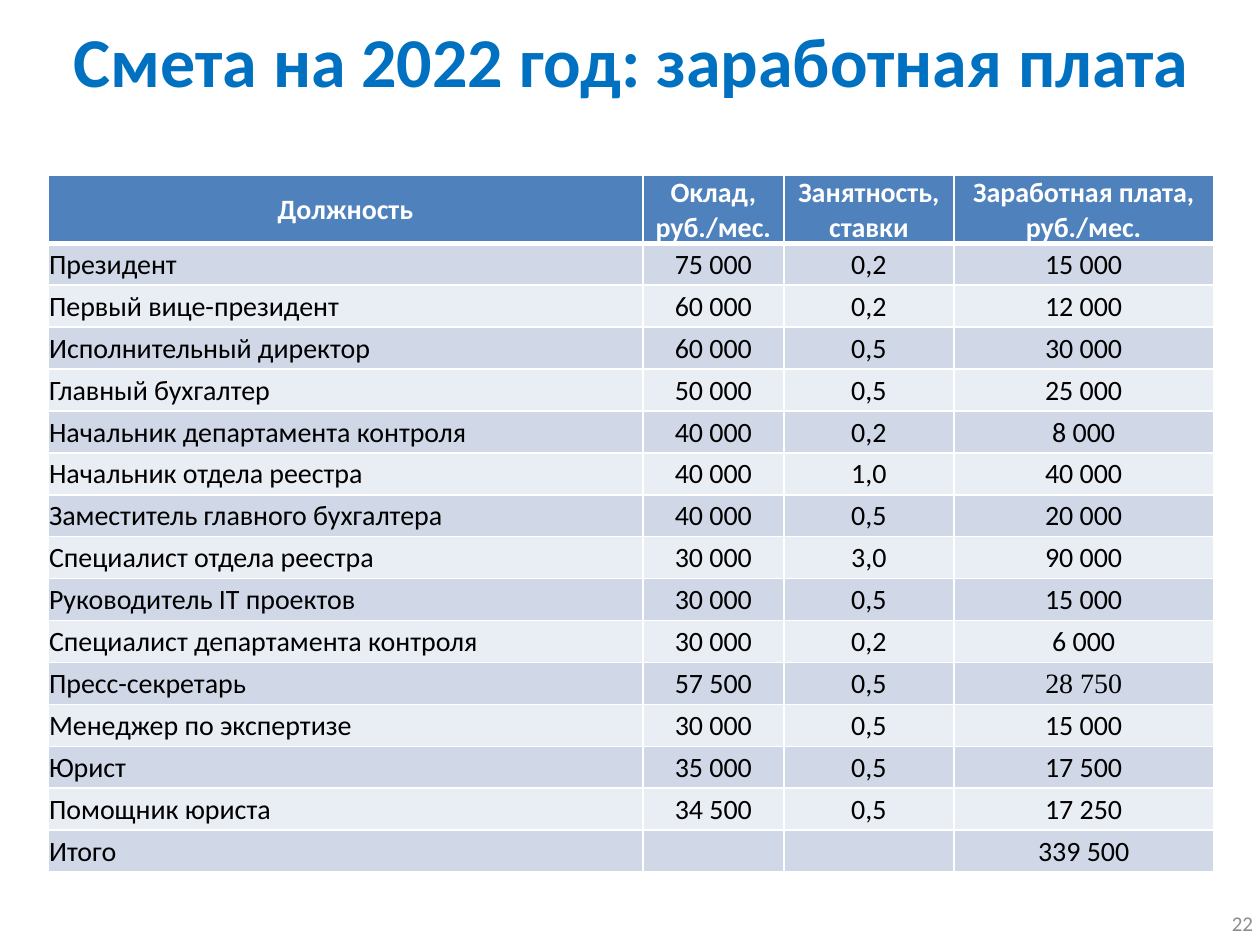
import pptx
import pptx.dml.color
import pptx.enum.text
import pptx.util
from lxml import etree

Cm = pptx.util.Cm
Pt = pptx.util.Pt
ALIGN = pptx.enum.text.PP_ALIGN
MIDDLE = pptx.enum.text.MSO_ANCHOR.MIDDLE
NS = "http://schemas.openxmlformats.org/drawingml/2006/main"

HUES = {"title": "0070C0", "head": "4F81BD", "odd": "D0D8E8", "even": "E9EDF4",
        "white": "FFFFFF", "black": "000000", "gray": "8C8C8C"}

WIDTHS = (11.99, 2.84, 3.43, 5.23)
HEAD = ("Должность", "Оклад, руб./мес.", "Занятность, ставки",
        "Заработная плата, руб./мес.")
STAFF = (
    ("Президент", "75 000", "0,2", "15 000"),
    ("Первый вице-президент", "60 000", "0,2", "12 000"),
    ("Исполнительный директор", "60 000", "0,5", "30 000"),
    ("Главный бухгалтер", "50 000", "0,5", "25 000"),
    ("Начальник департамента контроля", "40 000", "0,2", "8 000"),
    ("Начальник отдела реестра", "40 000", "1,0", "40 000"),
    ("Заместитель главного бухгалтера", "40 000", "0,5", "20 000"),
    ("Специалист отдела реестра", "30 000", "3,0", "90 000"),
    ("Руководитель IT проектов", "30 000", "0,5", "15 000"),
    ("Специалист департамента контроля", "30 000", "0,2", "6 000"),
    ("Пресс-секретарь", "57 500", "0,5", "28 750"),
    ("Менеджер по экспертизе", "30 000", "0,5", "15 000"),
    ("Юрист", "35 000", "0,5", "17 500"),
    ("Помощник юриста", "34 500", "0,5", "17 250"),
    ("Итого", "", "", "339 500"),
)


def color(name):
    return pptx.dml.color.RGBColor.from_string(HUES[name])


def write(frame, text, size=16, hue="black", bold=False, align=ALIGN.CENTER,
          face="Calibri"):
    para = frame.paragraphs[0]
    para.alignment = align
    run = para.add_run()
    run.text = text
    run.font.name = face
    run.font.size = Pt(size)
    run.font.bold = bold
    run.font.color.rgb = color(hue)


def border(cell, base):
    """Draw white cell edges; base is the width of the lower one in points."""
    props = cell._tc.get_or_add_tcPr()
    for spot, (side, width) in enumerate(
            (("L", 1), ("R", 1), ("T", 1), ("B", base))):
        line = etree.Element(f"{{{NS}}}ln{side}", w=str(Pt(width)))
        fill = etree.SubElement(line, f"{{{NS}}}solidFill")
        etree.SubElement(fill, f"{{{NS}}}srgbClr", val=HUES["white"])
        props.insert(spot, line)


def style(cell, fill, base=1):
    cell.fill.solid()
    cell.fill.fore_color.rgb = color(fill)
    cell.vertical_anchor = MIDDLE
    cell.margin_left = cell.margin_right = cell.margin_top = Cm(0.02)
    cell.margin_bottom = 0
    border(cell, base)


def add_title(slide):
    title = slide.shapes.title
    title.left, title.top = Cm(0), Cm(-0.05)
    title.width, title.height = Cm(25.45), Cm(2.49)
    title.text_frame.vertical_anchor = MIDDLE
    write(title.text_frame, "Смета на 2022 год: заработная плата",
          size=40, hue="title", bold=True)


def add_costs(slide):
    table = slide.shapes.add_table(
        len(STAFF) + 1, len(HEAD), Cm(0.97), Cm(3.53),
        Cm(sum(WIDTHS)), Cm(14.07)).table
    for col, width in zip(table.columns, WIDTHS):
        col.width = Cm(width)
    for num, row in enumerate(table.rows):
        row.height = Cm(0.845 if num else 1.34)

    # Header row
    for col, text in enumerate(HEAD):
        cell = table.cell(0, col)
        style(cell, "head", base=3)
        write(cell.text_frame, text, hue="white", bold=True)

    # Staff rows in alternating bands
    for num, line in enumerate(STAFF, 1):
        for col, text in enumerate(line):
            cell = table.cell(num, col)
            style(cell, "odd" if num % 2 else "even")
            if text:
                write(cell.text_frame, text,
                      align=ALIGN.CENTER if col else ALIGN.LEFT,
                      face="Times New Roman" if text == "28 750" else "Calibri")


def add_page(slide):
    box = slide.shapes.add_textbox(Cm(19.58), Cm(18.11), Cm(5.93), Cm(1.01))
    box.text_frame.word_wrap = True
    box.text_frame.vertical_anchor = MIDDLE
    write(box.text_frame, "22", size=12, hue="gray", align=ALIGN.RIGHT)


def main():
    deck = pptx.Presentation()
    deck.slide_width, deck.slide_height = Cm(25.4), Cm(19.05)
    slide = deck.slides.add_slide(deck.slide_layouts[5])  # title only
    add_page(slide)
    add_title(slide)
    add_costs(slide)
    deck.save("out.pptx")


if __name__ == "__main__":
    main()
